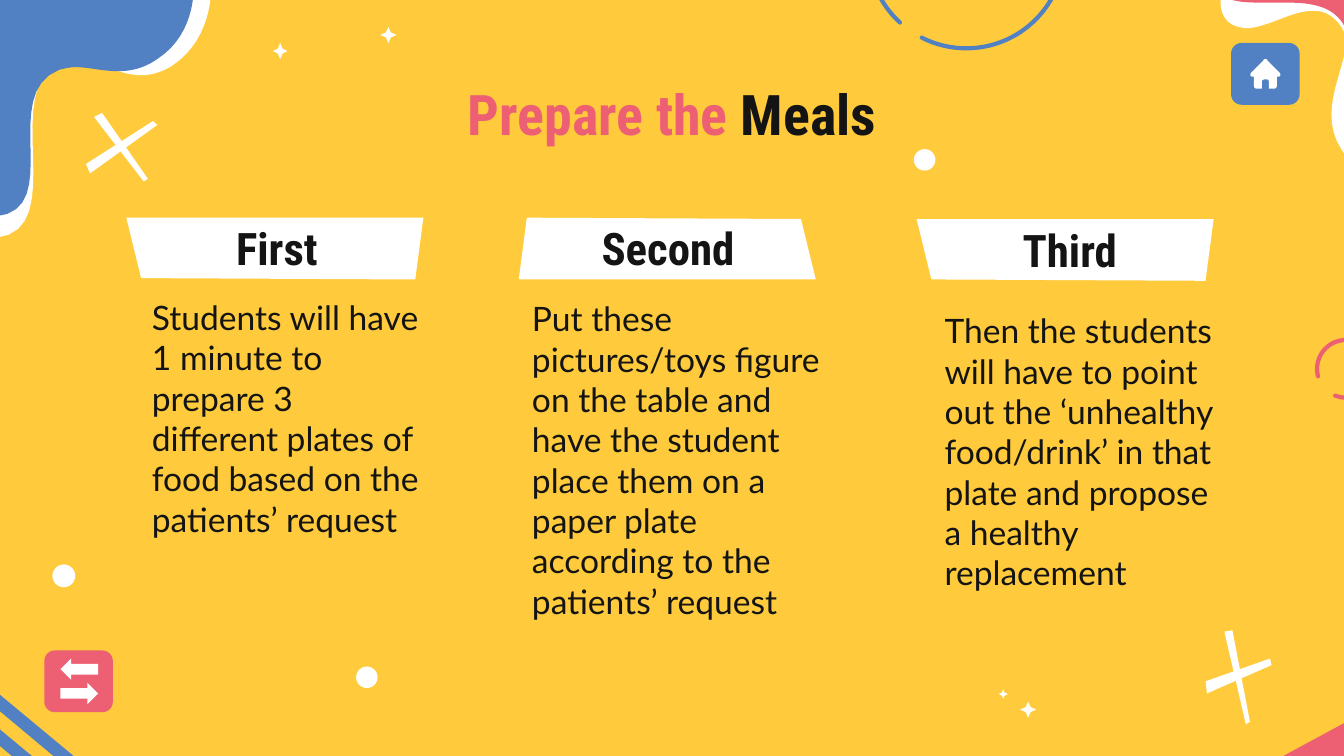
from pptx import Presentation
from pptx.dml.color import RGBColor
from pptx.enum import shapes, text
from pptx.util import Inches, Pt

YELLOW = RGBColor(0xFF, 0xCB, 0x3C)
BLUE = RGBColor(0x51, 0x81, 0xC2)
PINK = RGBColor(0xED, 0x5F, 0x73)
WHITE = RGBColor(0xFF, 0xFF, 0xFF)
INK = RGBColor(0x14, 0x14, 0x14)
HEADING_FONT, BODY_FONT = "Roboto Condensed", "Lato"
KIND = shapes.MSO_SHAPE

prs = Presentation()
prs.slide_width, prs.slide_height = Inches(10), Inches(10) * 9 // 16
slide = prs.slides.add_slide(prs.slide_layouts[6])
slide.background.fill.solid()
slide.background.fill.fore_color.rgb = YELLOW


def add_outline(color, start, *segments):
    """Filled outline; a segment is a line (x, y) or a Bézier curve (x1, y1, x2, y2, x, y)."""
    points = [start]
    for segment in segments:
        if len(segment) == 2:
            points.append(segment)
            continue
        curve = [points[-1], segment[:2], segment[2:4], segment[4:]]
        for step in range(1, 17):
            t = step / 16
            weights = ((1 - t) ** 3, 3 * t * (1 - t) ** 2, 3 * t * t * (1 - t), t ** 3)
            points.append(tuple(sum(w * p[axis] for w, p in zip(weights, curve)) for axis in (0, 1)))
    points = [(Inches(x), Inches(y)) for x, y in points]
    builder = slide.shapes.build_freeform(*points[0])
    builder.add_line_segments(points[1:], close=True)
    outline = builder.convert_to_shape()
    outline.shadow.inherit = False
    outline.fill.solid()
    outline.fill.fore_color.rgb = color
    outline.line.fill.background()


def add_text(box, runs, font, size, bold=False, align=text.PP_ALIGN.LEFT,
             anchor=text.MSO_ANCHOR.TOP, indent=0):
    frame = slide.shapes.add_textbox(*map(Inches, box)).text_frame
    frame.word_wrap = True
    frame.vertical_anchor = anchor
    frame.margin_left = frame.margin_right = frame.margin_top = frame.margin_bottom = Inches(0.1)
    paragraph = frame.paragraphs[0]
    paragraph.alignment = align
    if indent:
        properties = paragraph._p.get_or_add_pPr()
        properties.set("marL", str(Pt(indent)))
        properties.set("indent", "0")
    for words, color in runs:
        run = paragraph.add_run()
        run.text = words
        run.font.name, run.font.size, run.font.bold = font, Pt(size), bold
        run.font.color.rgb = color


# Stripes in the bottom corners
for i in range(2):
    x, y = -0.53 - 0.13 * i, 4.73 + 0.15 * i
    add_outline(BLUE, (x, y), (x + 1.95, y + 1.62), (x + 1.89, y + 1.7), (x - 0.06, y + 0.07))
add_outline(PINK, (11.65, 4.49), (11.76, 4.69), (8.26, 6.58), (8.15, 6.38))

# Blobs in the top corners
add_outline(WHITE, (10.43, 1.35), (10.29, 1.35, 10.1, 1.31, 9.98, 1.11),
            (9.76, 0.77, 10.12, 0.39, 9.98, 0.2), (9.92, 0.11, 9.85, 0.08, 9.77, 0.08),
            (9.61, 0.08, 9.42, 0.21, 9.27, 0.21), (9.25, 0.21, 9.23, 0.2, 9.21, 0.2),
            (8.97, 0.13, 9.14, -0.23, 9.14, -0.23), (10.65, -0.23), (10.65, 1.32),
            (10.65, 1.32, 10.56, 1.35, 10.43, 1.35))
add_outline(PINK, (10.61, 1.23), (10.5, 1.23, 10.25, 1.21, 10.1, 0.97),
            (9.91, 0.67, 10.1, 0.45, 10.02, 0.23), (9.95, 0.05, 9.77, 0.02, 9.58, 0.02),
            (9.37, 0.02), (9.17, 0.02, 9, -0.01, 8.98, -0.23), (10.65, -0.23), (10.65, 1.23))
add_outline(WHITE, (-0.02, -0.14), (1.57, -0.14), (1.57, -0.14, 1.61, 0.27, 1.28, 0.49),
            (1.2, 0.54, 1.12, 0.56, 1.05, 0.56), (0.87, 0.56, 0.7, 0.43, 0.55, 0.43),
            (0.52, 0.43, 0.49, 0.44, 0.47, 0.45), (-0.03, 0.64, 0.54, 1.71, -0.03, 1.77))
add_outline(BLUE, (-0.02, -0.14), (1.44, -0.14), (1.44, -0.14, 1.48, 0.24, 1.17, 0.44),
            (1.07, 0.51, 0.97, 0.53, 0.88, 0.53), (0.76, 0.53, 0.66, 0.5, 0.56, 0.5),
            (0.52, 0.5, 0.48, 0.51, 0.44, 0.52), (-0.02, 0.7, 0.49, 1.56, -0.03, 1.61))

# Crosses, two strokes each
for stroke in (
    [(0.76, 0.84), (1.1, 1.33), (1.07, 1.35), (0.7, 0.87)],
    [(1.14, 0.9), (1.17, 0.93), (0.67, 1.29), (0.64, 1.22)],
    [(9.17, 4.69), (9.3, 5.37), (9.27, 5.39), (9.11, 4.7)],
    [(9.45, 4.9), (9.46, 4.95), (8.98, 5.16), (8.97, 5.07)],
):
    add_outline(WHITE, *stroke)

# Open rings: box, start and end angle clockwise from the right
for box, start, end, color in (
    ((6.46, -1.1, 1.46, 1.46), 132.5, 117, BLUE),
    ((9.8, 2.53, 0.43, 0.43), 165, 112, PINK),
):
    ring = slide.shapes.add_shape(KIND.ARC, *map(Inches, box))
    ring.shadow.inherit = False
    ring.adjustments[0], ring.adjustments[1] = start * 0.6, end * 0.6
    ring.fill.background()
    ring.line.color.rgb = color
    ring.line.width = Pt(2.25)
    ring.line._get_or_add_ln().set("cap", "rnd")

# Dots, sparkles and the two buttons
for kind, box, color, adjustment in (
    (KIND.OVAL, (2.65, 4.96, 0.16, 0.16), WHITE, None),
    (KIND.OVAL, (6.8, 1.11, 0.16, 0.16), WHITE, None),
    (KIND.OVAL, (0.39, 4.2, 0.17, 0.17), WHITE, None),
    (KIND.STAR_4_POINT, (2.83, 0.2, 0.12, 0.12), WHITE, 0.22),
    (KIND.STAR_4_POINT, (2.03, 0.32, 0.11, 0.12), WHITE, 0.22),
    (KIND.STAR_4_POINT, (7.59, 5.22, 0.12, 0.12), WHITE, 0.22),
    (KIND.STAR_4_POINT, (7.43, 5.13, 0.07, 0.07), WHITE, 0.22),
    (KIND.ROUNDED_RECTANGLE, (0.33, 4.84, 0.51, 0.46), PINK, 0.17),
    (KIND.RIGHT_ARROW, (0.45, 5.08, 0.28, 0.16), WHITE, 0.5),
    (KIND.LEFT_ARROW, (0.45, 4.9, 0.28, 0.16), WHITE, 0.5),
    (KIND.ROUNDED_RECTANGLE, (9.16, 0.32, 0.51, 0.46), BLUE, 0.17),
):
    ornament = slide.shapes.add_shape(kind, *map(Inches, box))
    ornament.shadow.inherit = False
    ornament.fill.solid()
    ornament.fill.fore_color.rgb = color
    ornament.line.fill.background()
    if adjustment is not None:
        ornament.adjustments[0] = adjustment

# House on the home button
add_outline(WHITE, (9.42, 0.44), (9.41, 0.44, 9.4, 0.44, 9.4, 0.45), (9.31, 0.54),
            (9.3, 0.55, 9.3, 0.57, 9.32, 0.57), (9.33, 0.57), (9.33, 0.64),
            (9.33, 0.65, 9.34, 0.66, 9.35, 0.66), (9.39, 0.66), (9.39, 0.6),
            (9.39, 0.6, 9.4, 0.59, 9.41, 0.59), (9.43, 0.59), (9.43, 0.59, 9.44, 0.6, 9.44, 0.6),
            (9.44, 0.66), (9.48, 0.66), (9.49, 0.66, 9.5, 0.65, 9.5, 0.64), (9.5, 0.57),
            (9.51, 0.57), (9.53, 0.57, 9.53, 0.55, 9.52, 0.54), (9.43, 0.45),
            (9.43, 0.44, 9.42, 0.44, 9.42, 0.44))

# Title
add_text((3.15, 0.49, 3.7, 0.63), [("Prepare the", PINK), (" Meals", INK)],
         HEADING_FONT, 30, True, text.PP_ALIGN.CENTER)

# Three steps: banner, heading and description
BANNER = [(0, 0), (0.11, 0.45), (2.15, 0.46), (2.21, 0)]
TURNED_BANNER = [(2.21 - x, 0.46 - y) for x, y in BANNER]
for heading, banner, left, top, heading_left, body_box, indent, body in (
    ("First", BANNER, 0.94, 1.62, 0.49, (0.88, 2.11, 2.34, 1.74), 11,
     "Students will have 1 minute to prepare 3 different plates of food based on the patients’ request"),
    ("Second", TURNED_BANNER, 3.86, 1.62, 3.4, (3.86, 2.12, 2.49, 1.74), 0,
     "Put these pictures/toys figure on the table and have the student place them on a paper plate "
     "according to the patients’ request"),
    ("Third", BANNER, 6.82, 1.63, 6.39, (6.93, 2.21, 2.34, 1.74), 0,
     "Then the students will have to point out the ‘unhealthy food/drink’ in that plate "
     "and propose a healthy replacement"),
):
    add_outline(WHITE, *[(left + x, top + y) for x, y in banner])
    add_text((heading_left, top - 0.04, 3.14, 0.53), [(heading, INK)], HEADING_FONT, 24, True,
             text.PP_ALIGN.CENTER, text.MSO_ANCHOR.MIDDLE)
    add_text(body_box, [(body, INK)], BODY_FONT, 18, indent=indent)

prs.save("out.pptx")
